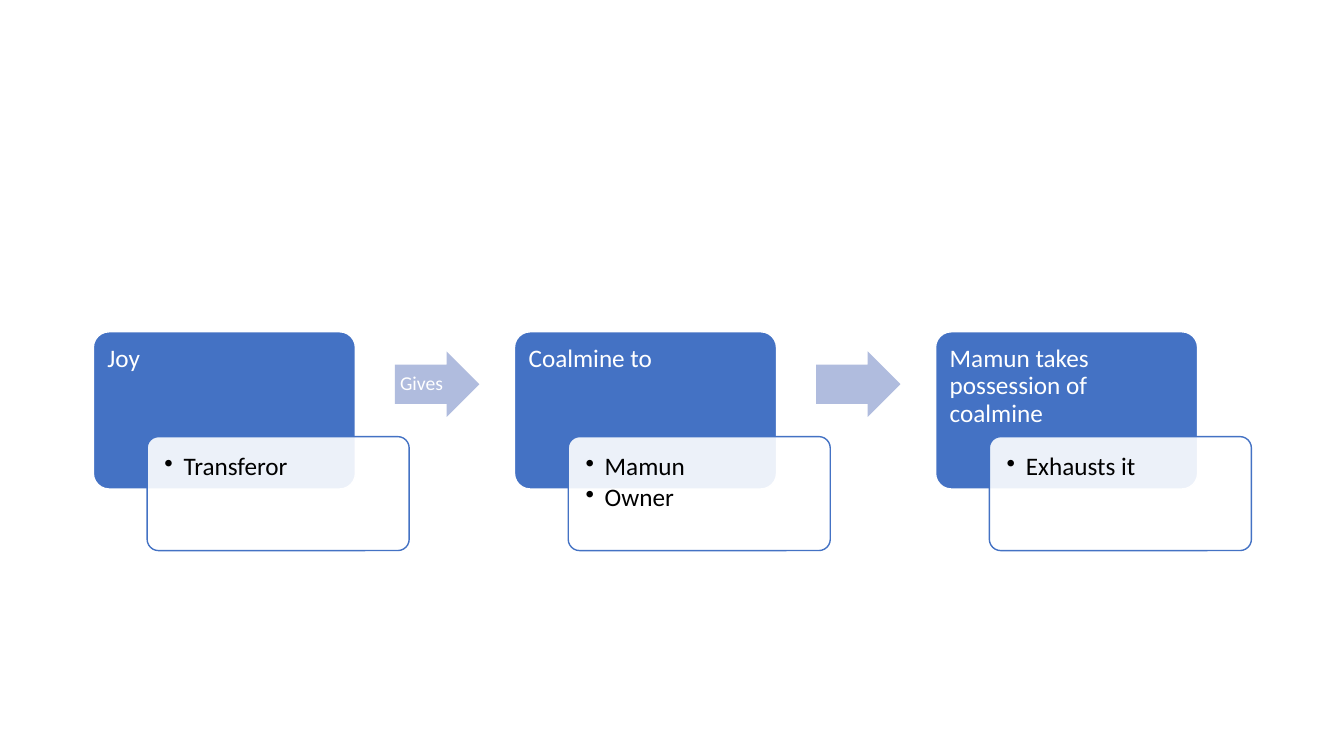
import lxml.etree
import pptx
import pptx.dml.color
import pptx.enum.shapes
import pptx.enum.text
import pptx.oxml.ns
import pptx.util

Pt = pptx.util.Pt
SHAPES = pptx.enum.shapes.MSO_SHAPE
ALIGN = pptx.enum.text.PP_ALIGN
ANCHOR = pptx.enum.text.MSO_ANCHOR
COLORS = {"blue": "4472C4", "arrow": "B0BCDE", "white": "FFFFFF", "black": "000000"}

# Formats: box in points (left is relative to its step), adjustments, text
FORMATS = {
    "heading": dict(
        kind=SHAPES.ROUNDED_RECTANGLE, box=(0, 237, 187.2, 112.3), adjustments=(0.1,),
        fill="blue", line="white", color="white", size=18, after=6.3, align=ALIGN.LEFT,
        frame=dict(margin_left=Pt(6.8), margin_top=Pt(6.8), margin_right=Pt(6.8),
                   margin_bottom=Pt(5), vertical_anchor=ANCHOR.TOP)),
    "card": dict(
        kind=SHAPES.ROUNDED_RECTANGLE, box=(38.4, 311.9, 187.2, 81.4), adjustments=(0.1,),
        fill="white", line="blue", color="black", size=18, after=2.7, align=ALIGN.LEFT,
        frame=dict(margin_left=Pt(10), margin_top=Pt(10), margin_right=Pt(10),
                   margin_bottom=Pt(10), vertical_anchor=ANCHOR.TOP)),
    "arrow": dict(
        kind=SHAPES.RIGHT_ARROW, box=(215.4, 251, 60.3, 46.8), adjustments=(0.6, 0.5),
        fill="arrow", line=None, color="white", size=14, after=0, align=ALIGN.CENTER,
        frame=dict(margin_left=0, margin_top=0, margin_right=Pt(5),
                   margin_bottom=0, vertical_anchor=ANCHOR.MIDDLE)),
}

# Each step: heading, bullets on the card, label of the arrow that follows
STEPS = [
    ("Joy", ["Transferor"], "Gives "),
    ("Coalmine to", ["Mamun", "Owner"], ""),
    ("Mamun takes possession of coalmine", ["Exhausts it"], None),
]
FIRST_LEFT, STEP_PITCH = 66.7, 300.8


def rgb(name):
    return pptx.dml.color.RGBColor.from_string(COLORS[name])


def add_part(name, step_left, texts):
    style = FORMATS[name]
    left, top, width, height = style["box"]
    shape = slide.shapes.add_shape(
        style["kind"], Pt(step_left + left), Pt(top), Pt(width), Pt(height))
    shape.shadow.inherit = False
    for index, value in enumerate(style["adjustments"]):
        shape.adjustments[index] = value
    shape.fill.solid()
    shape.fill.fore_color.rgb = rgb(style["fill"])
    if style["line"]:
        shape.line.color.rgb = rgb(style["line"])
        shape.line.width = Pt(1)
    else:
        shape.line.fill.background()

    frame = shape.text_frame
    frame.word_wrap = True
    for attribute, value in style["frame"].items():
        setattr(frame, attribute, value)
    for index, text in enumerate(texts):
        paragraph = frame.paragraphs[0] if index == 0 else frame.add_paragraph()
        paragraph.text = text
        if name == "card":
            properties = paragraph.runs[0].font._element.getparent().getparent().get_or_add_pPr()
            properties.set("marL", str(Pt(13.7)))
            properties.set("indent", str(-Pt(13.7)))
            bullet = lxml.etree.SubElement(properties, pptx.oxml.ns.qn("a:buChar"))
            bullet.set("char", "•")
        paragraph.alignment = style["align"]
        paragraph.line_spacing = 0.9
        paragraph.space_after = Pt(style["after"])
        for attribute, value in {"name": "Calibri", "size": Pt(style["size"])}.items():
            setattr(paragraph.font, attribute, value)
        paragraph.font.color.rgb = rgb(style["color"])
    return shape


presentation = pptx.Presentation()
presentation.slide_width, presentation.slide_height = Pt(960), Pt(540)
slide = presentation.slides.add_slide(presentation.slide_layouts[6])

# Process steps from left to right
for number, (heading, bullets, arrow_label) in enumerate(STEPS):
    step_left = FIRST_LEFT + number * STEP_PITCH
    add_part("heading", step_left, [heading])
    card = add_part("card", step_left, bullets)

    # Card lets the heading shine through
    card_color = card.fill._xPr.find(".//" + pptx.oxml.ns.qn("a:srgbClr"))
    lxml.etree.SubElement(card_color, pptx.oxml.ns.qn("a:alpha")).set("val", "90000")

    if arrow_label is not None:
        add_part("arrow", step_left, [arrow_label] if arrow_label else [])

presentation.save("out.pptx")
